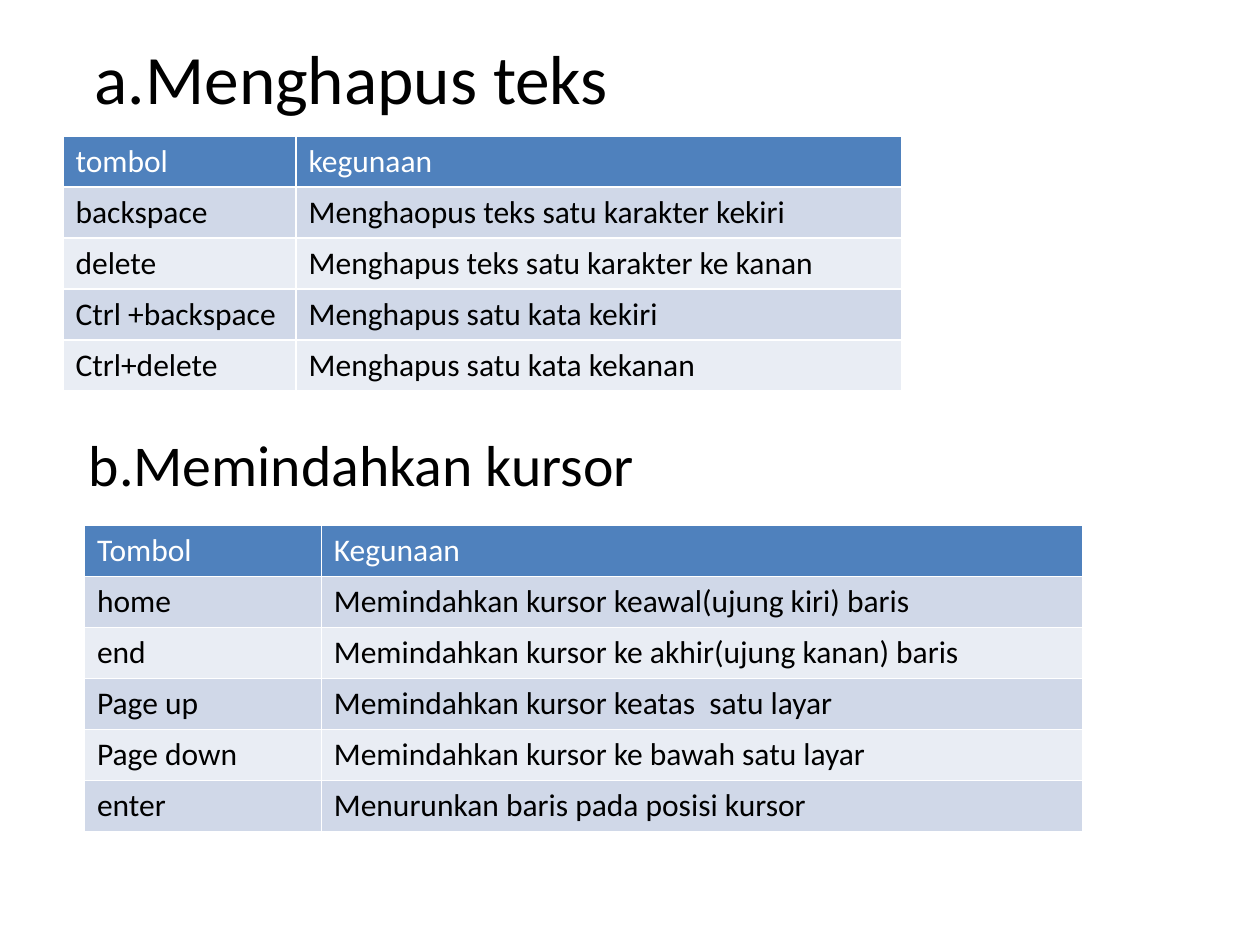
from dataclasses import dataclass

from lxml.etree import SubElement
from pptx import Presentation
from pptx.dml.color import RGBColor
from pptx.enum.text import MSO_ANCHOR, PP_ALIGN
from pptx.oxml.ns import qn
from pptx.slide import Slide
from pptx.table import _Cell as Cell
from pptx.util import Inches, Pt

BLACK = RGBColor(0x00, 0x00, 0x00)
WHITE = RGBColor(0xFF, 0xFF, 0xFF)
HEADER = RGBColor(0x4F, 0x81, 0xBD)
BANDS = (RGBColor(0xE9, 0xED, 0xF4), RGBColor(0xD0, 0xD8, 0xE8))
FONT = "Calibri"
WIDTH, HEIGHT = Inches(10), Inches(7.5)
ROW = HEIGHT * 0.054
TITLE_W, TITLE_H = WIDTH * 0.458, HEIGHT * 0.083


@dataclass(frozen=True)
class Heading:
    text: str
    left: float
    top: float
    size: float
    spacing: float


@dataclass(frozen=True)
class KeyTable:
    left: float
    top: float
    columns: tuple[float, float]
    rows: tuple[tuple[str, str], ...]


HEADINGS = (
    Heading("a.Menghapus teks", 0.05, 0.04, 39.6, 1.0),
    Heading("b.Memindahkan kursor", 0.058, 0.456, 33, 0.8),
)

TABLES = (
    KeyTable(0.05, 0.144, (0.185, 0.481), (
        ("tombol", "kegunaan"),
        ("backspace", "Menghaopus teks satu karakter kekiri"),
        ("delete", "Menghapus teks satu karakter ke kanan"),
        ("Ctrl +backspace", "Menghapus satu kata kekiri"),
        ("Ctrl+delete", "Menghapus satu kata kekanan"),
    )),
    KeyTable(0.067, 0.556, (0.188, 0.604), (
        ("Tombol", "Kegunaan"),
        ("home", "Memindahkan kursor keawal(ujung kiri) baris"),
        ("end", "Memindahkan kursor ke akhir(ujung kanan) baris"),
        ("Page up", "Memindahkan kursor keatas  satu layar"),
        ("Page down", "Memindahkan kursor ke bawah satu layar"),
        ("enter", "Menurunkan baris pada posisi kursor"),
    )),
)


def add_heading(s: Slide, heading: Heading) -> None:
    """Add a centred heading."""
    sp = s.shapes.add_textbox(int(WIDTH * heading.left), int(HEIGHT * heading.top),
                              int(TITLE_W), int(TITLE_H))
    tf = sp.text_frame
    tf.word_wrap = True
    tf.vertical_anchor = MSO_ANCHOR.MIDDLE
    p = tf.paragraphs[0]
    p.text = heading.text
    p.alignment = PP_ALIGN.CENTER
    p.line_spacing = heading.spacing
    p.font.name, p.font.size = FONT, Pt(heading.size)
    p.font.color.rgb = BLACK


def add_borders(cell: Cell) -> None:
    """Draw thin white lines around a cell."""
    props = cell._tc.get_or_add_tcPr()
    for side in ("a:lnL", "a:lnR", "a:lnT", "a:lnB"):
        line = SubElement(props, qn(side), w=str(Pt(1)))
        fill = SubElement(line, qn("a:solidFill"))
        SubElement(fill, qn("a:srgbClr"), val=str(WHITE))


def fill_cell(cell: Cell, text: str, row: int) -> None:
    """Write and colour a cell according to its row."""
    add_borders(cell)
    cell.fill.solid()
    cell.fill.fore_color.rgb = BANDS[row % 2] if row else HEADER
    p = cell.text_frame.paragraphs[0]
    p.text = text
    p.font.name, p.font.size, p.font.bold = FONT, Pt(18), False
    p.font.color.rgb = BLACK if row else WHITE


def add_key_table(s: Slide, spec: KeyTable) -> None:
    """Add a banded table of keys and their uses."""
    count = len(spec.rows)
    table = s.shapes.add_table(
        count, len(spec.columns), int(WIDTH * spec.left), int(HEIGHT * spec.top),
        int(WIDTH * sum(spec.columns)), int(ROW * count)).table
    for column, share in zip(table.columns, spec.columns):
        column.width = int(WIDTH * share)
    for i, row in enumerate(spec.rows):
        for j, text in enumerate(row):
            fill_cell(table.cell(i, j), text, i)


def main() -> None:
    """Build and save the slide."""
    prs = Presentation()
    prs.slide_width, prs.slide_height = WIDTH, HEIGHT
    s = prs.slides.add_slide(prs.slide_layouts[6])
    for heading, table in zip(HEADINGS, TABLES):
        add_heading(s, heading)
        add_key_table(s, table)
    prs.save("out.pptx")


if __name__ == "__main__":
    main()
